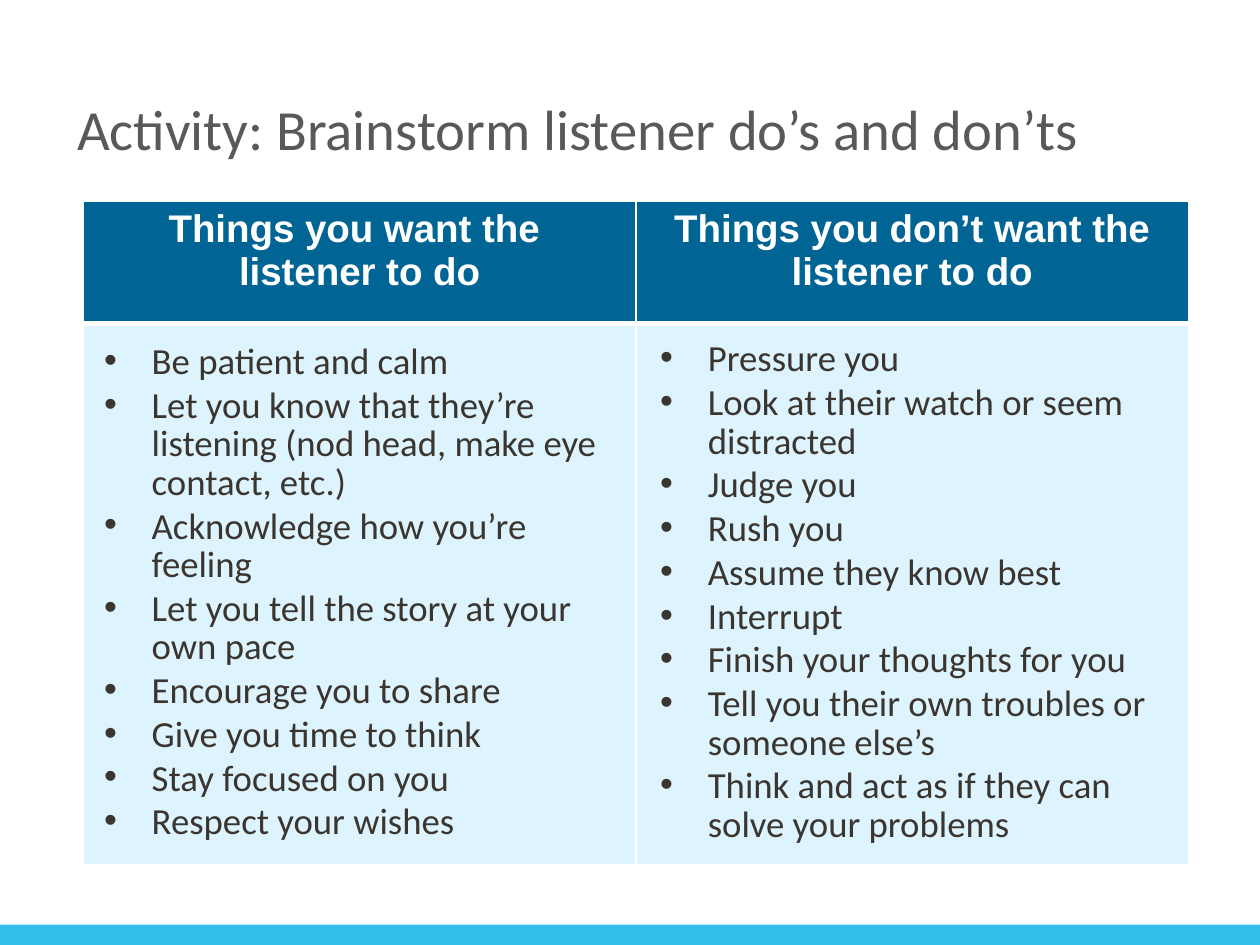
from dataclasses import dataclass

from lxml import etree
from pptx import Presentation
from pptx import util as u
from pptx.dml.color import RGBColor
from pptx.enum import shapes, text
from pptx.oxml import ns


@dataclass(frozen=True)
class Theme:
    bar: str = "32BDEA"
    title: str = "595959"
    header: str = "006595"
    body: str = "DDF4FF"
    white: str = "FFFFFF"
    ink: str = "3B352F"
    text_font: str = "Calibri"
    header_font: str = "Arial"
    title_size: float = 32.4
    header_size: float = 22
    list_size: float = 21


@dataclass(frozen=True)
class Box:
    left: float
    top: float
    width: float
    height: float

    def lengths(self) -> tuple:
        return tuple(u.Cm(value) for value in (self.left, self.top, self.width, self.height))


@dataclass(frozen=True)
class Column:
    heading: str
    list_box: Box
    items: tuple


THEME = Theme()
TITLE_BOX = Box(1.3, 1.24, 22.83, 2.69)
TABLE_BOX = Box(1.68, 4.06, 22.28, 13.38)
BAR_BOX = Box(0, 18.64, 25.4, 0.5)
HEADER_HEIGHT = 2.46
INDENT = 0.96

COLUMNS = (
    Column("Things you want the \vlistener to do", Box(1.85, 6.91, 11.2, 10.08), (
        "Be patient and calm",
        "Let you know that they’re listening (nod head, make eye contact, etc.)",
        "Acknowledge how you’re feeling",
        "Let you tell the story at your own pace",
        "Encourage you to share",
        "Give you time to think",
        "Stay focused on you",
        "Respect your wishes",
    )),
    Column("Things you don’t want the listener to do", Box(13.06, 6.45, 11.07, 11), (
        "Pressure you",
        "Look at their watch or seem distracted",
        "Judge you",
        "Rush you",
        "Assume they know best",
        "Interrupt",
        "Finish your thoughts for you",
        "Tell you their own troubles or someone else’s",
        "Think and act as if they can solve your problems",
    )),
)


def style_runs(paragraph, font: str, size: float, color: str, bold: bool = False) -> None:
    for run in paragraph.runs:
        run.font.name = font
        run.font.size = u.Pt(size)
        run.font.bold = bold
        run.font.color.rgb = RGBColor.from_string(color)


def style_cell(cell, fill: str, bottom_width: float) -> None:
    # Borders come before the fill in the cell properties
    properties = cell._tc.get_or_add_tcPr()
    widths = {"lnL": 1, "lnR": 1, "lnT": 1, "lnB": bottom_width}
    for side, width in widths.items():
        line = etree.SubElement(properties, ns.qn(f"a:{side}"), w=str(u.Pt(width)))
        solid = etree.SubElement(line, ns.qn("a:solidFill"))
        etree.SubElement(solid, ns.qn("a:srgbClr"), val=THEME.white)
    cell.fill.solid()
    cell.fill.fore_color.rgb = RGBColor.from_string(fill)


def add_title(slide, wording: str) -> None:
    title = slide.shapes.title
    title.left, title.top, title.width, title.height = TITLE_BOX.lengths()
    frame = title.text_frame
    frame.text = wording
    frame.auto_size = text.MSO_AUTO_SIZE.NONE
    frame.vertical_anchor = text.MSO_ANCHOR.MIDDLE
    paragraph = frame.paragraphs[0]
    paragraph.alignment = text.PP_ALIGN.LEFT
    style_runs(paragraph, THEME.text_font, THEME.title_size, THEME.title)


def add_bar(slide) -> None:
    bar = slide.shapes.add_shape(shapes.MSO_SHAPE.RECTANGLE, *BAR_BOX.lengths())
    bar.shadow.inherit = False
    bar.fill.solid()
    bar.fill.fore_color.rgb = RGBColor.from_string(THEME.bar)
    bar.line.fill.background()


def add_comparison_table(slide) -> None:
    table = slide.shapes.add_table(2, len(COLUMNS), *TABLE_BOX.lengths()).table
    table.horz_banding = False
    table.rows[0].height = u.Cm(HEADER_HEIGHT)
    table.rows[1].height = u.Cm(TABLE_BOX.height - HEADER_HEIGHT)
    for index, column in enumerate(COLUMNS):
        header = table.cell(0, index)
        header.text_frame.text = column.heading
        paragraph = header.text_frame.paragraphs[0]
        paragraph.alignment = text.PP_ALIGN.CENTER
        style_runs(paragraph, THEME.header_font, THEME.header_size, THEME.white, bold=True)
        style_cell(header, THEME.header, 3)
        style_cell(table.cell(1, index), THEME.body, 1)


def add_bullet_list(slide, column: Column) -> None:
    frame = slide.shapes.add_textbox(*column.list_box.lengths()).text_frame
    frame.word_wrap = True
    frame.vertical_anchor = text.MSO_ANCHOR.MIDDLE
    frame.text = "\n".join(column.items)
    for paragraph in frame.paragraphs:
        paragraph.line_spacing = u.Pt(22)
        paragraph.space_after = u.Pt(3)
        properties = paragraph._p.get_or_add_pPr()
        properties.set("marL", str(u.Cm(INDENT)))
        properties.set("indent", str(-u.Cm(INDENT)))
        etree.SubElement(properties, ns.qn("a:buFont"), typeface=THEME.header_font)
        etree.SubElement(properties, ns.qn("a:buChar"), char="•")
        style_runs(paragraph, THEME.text_font, THEME.list_size, THEME.ink)


def main() -> None:
    presentation = Presentation()
    presentation.slide_width = u.Cm(25.4)
    presentation.slide_height = u.Cm(19.05)
    slide = presentation.slides.add_slide(presentation.slide_layouts[5])

    # Frame of the slide
    add_bar(slide)
    add_title(slide, "Activity: Brainstorm listener do’s and don’ts")

    # Table with the lists laid over its body cells
    add_comparison_table(slide)
    for column in COLUMNS:
        add_bullet_list(slide, column)

    presentation.save("out.pptx")


if __name__ == "__main__":
    main()
